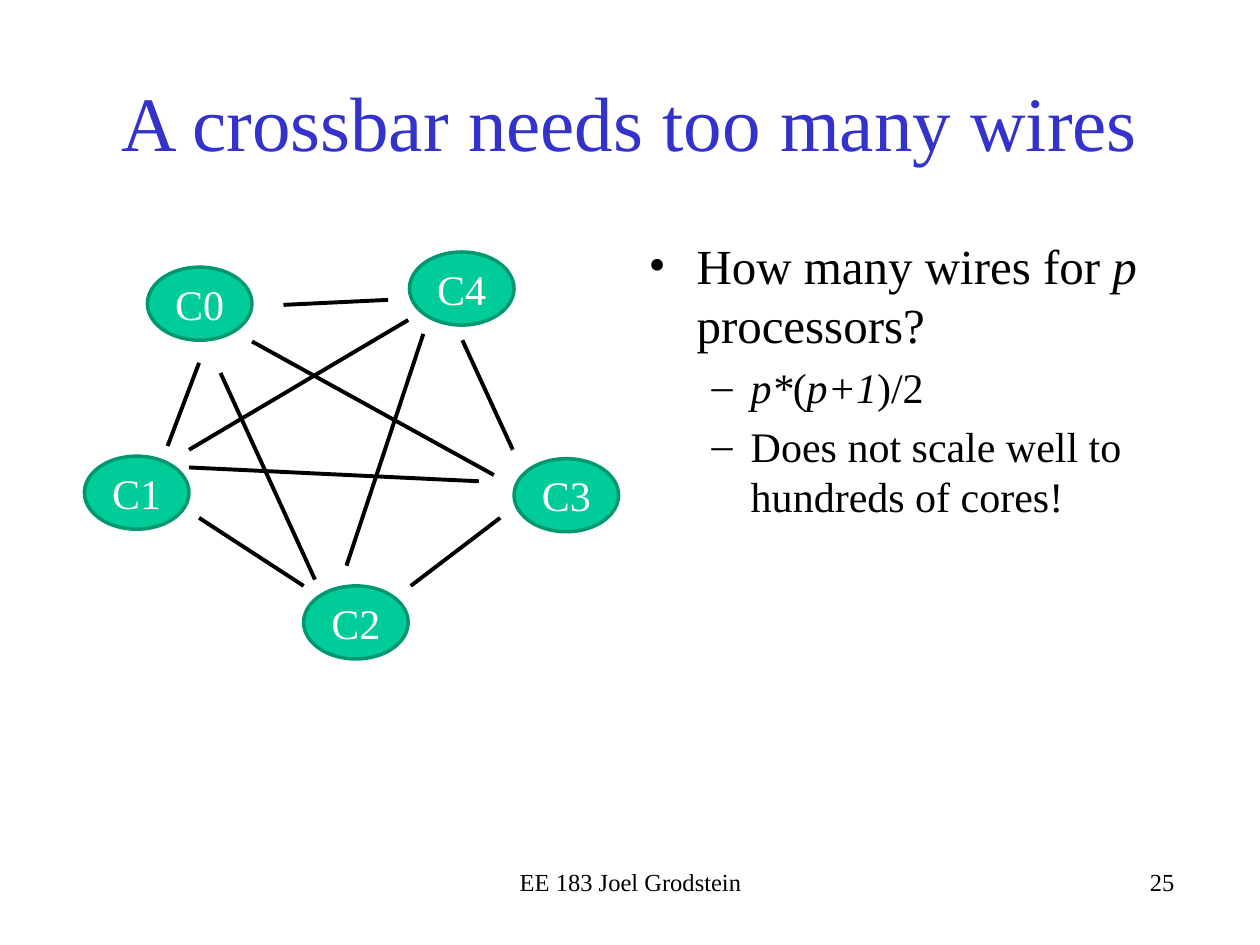
from lxml.etree import SubElement
from pptx import Presentation
from pptx.dml.color import RGBColor
from pptx.enum.shapes import MSO_CONNECTOR, MSO_SHAPE
from pptx.enum.text import MSO_ANCHOR, PP_ALIGN
from pptx.oxml.ns import qn
from pptx.util import Inches, Pt

FONT = "Times New Roman"
BLACK, WHITE, BLUE, GREEN, DARK_GREEN = "000000", "FFFFFF", "3333CC", "00CC99", "009771"
CORE_SIZE = (0.83, 0.58)

LABELS = [
    ("A crossbar needs too many wires", (0.75, 0.33, 8.5, 1.25), 44, BLUE,
     PP_ALIGN.CENTER, MSO_ANCHOR.MIDDLE),
    ("EE 183 Joel Grodstein", (3.42, 6.83, 3.17, 0.5), 14, BLACK,
     PP_ALIGN.CENTER, MSO_ANCHOR.TOP),
    ("25", (6.25, 6.83, 3.17, 0.5), 14, BLACK, PP_ALIGN.RIGHT, MSO_ANCHOR.TOP),
]
BODY_AREA = (5.05, 1.82, 4.75, 1.92)
BODY = [
    (0, [("How many wires for ", False), ("p", True), (" processors?", False)]),
    (1, [("p*", True), ("(", False), ("p+1", True), (")/2", False)]),
    (1, [("Does not scale well to hundreds of cores!", False)]),
]
LEVELS = [
    {"size": 28, "margin": 0.38, "indent": -0.38, "bullet": "•"},
    {"size": 24, "margin": 0.81, "indent": -0.31, "bullet": "–"},
]
CORES = {"C0": (1.17, 2.12), "C1": (0.67, 3.62), "C2": (2.41, 4.65),
         "C3": (4.08, 3.64), "C4": (3.25, 2)}
WIRES = [
    ((1.58, 2.88), (1.33, 3.54)),
    ((1.75, 2.96), (2.5, 4.6)),
    ((2.25, 2.42), (3.08, 2.38)),
    ((2, 2.71), (3.92, 3.77)),
    ((3.24, 2.54), (1.5, 3.57)),
    ((3.8, 3.82), (1.5, 3.71)),
    ((2.41, 4.65), (1.58, 4.11)),
    ((3.36, 2.65), (2.75, 4.49)),
    ((3.97, 4.11), (3.26, 4.65)),
    ((3.67, 2.7), (4.07, 3.57)),
]


def color(value):
    return RGBColor.from_string(value)


def inches(values):
    return [Inches(value) for value in values]


def add_span(para, text, size, hue, italic=False):
    span = para.add_run()
    span.text = text
    for name, value in {"name": FONT, "size": Pt(size), "italic": italic}.items():
        setattr(span.font, name, value)
    span.font.color.rgb = color(hue)


def add_label(page, text, area, size, hue, align, anchor):
    frame = page.shapes.add_textbox(*inches(area)).text_frame
    frame.word_wrap = True
    frame.vertical_anchor = anchor
    para = frame.paragraphs[0]
    para.alignment = align
    add_span(para, text, size, hue)


def add_body(page):
    frame = page.shapes.add_textbox(*inches(BODY_AREA)).text_frame
    frame.word_wrap = True
    for index, (level, spans) in enumerate(BODY):
        para = frame.add_paragraph() if index else frame.paragraphs[0]
        style = LEVELS[level]
        para.level = level
        para.space_before = Pt(0.2 * style["size"])
        properties = para._p.get_or_add_pPr()
        properties.set("marL", str(Inches(style["margin"])))
        properties.set("indent", str(Inches(style["indent"])))
        SubElement(properties, qn("a:buFont"), typeface=FONT)
        SubElement(properties, qn("a:buChar"), char=style["bullet"])
        for text, italic in spans:
            add_span(para, text, style["size"], BLACK, italic)


def add_core(page, name, corner):
    core = page.shapes.add_shape(MSO_SHAPE.OVAL, *inches(corner + CORE_SIZE))
    core.shadow.inherit = False
    core.fill.solid()
    core.fill.fore_color.rgb = color(GREEN)
    core.line.color.rgb = color(DARK_GREEN)
    core.line.width = Pt(2)
    frame = core.text_frame
    frame.word_wrap = False
    frame.vertical_anchor = MSO_ANCHOR.MIDDLE
    para = frame.paragraphs[0]
    para.alignment = PP_ALIGN.CENTER
    add_span(para, name, 24, WHITE)


def add_wire(page, start, end):
    wire = page.shapes.add_connector(MSO_CONNECTOR.STRAIGHT, *inches(start + end))
    wire.line.color.rgb = color(BLACK)
    wire.line.width = Pt(2.25)
    SubElement(wire._element.spPr, qn("a:effectLst"))


def main():
    deck = Presentation()
    deck.slide_width, deck.slide_height = inches((10, 7.5))
    page = deck.slides.add_slide(deck.slide_layouts[6])
    for label in LABELS:
        add_label(page, *label)
    add_body(page)
    for name, corner in CORES.items():
        add_core(page, name, corner)
    for start, end in WIRES:
        add_wire(page, start, end)
    deck.save("out.pptx")


if __name__ == "__main__":
    main()
